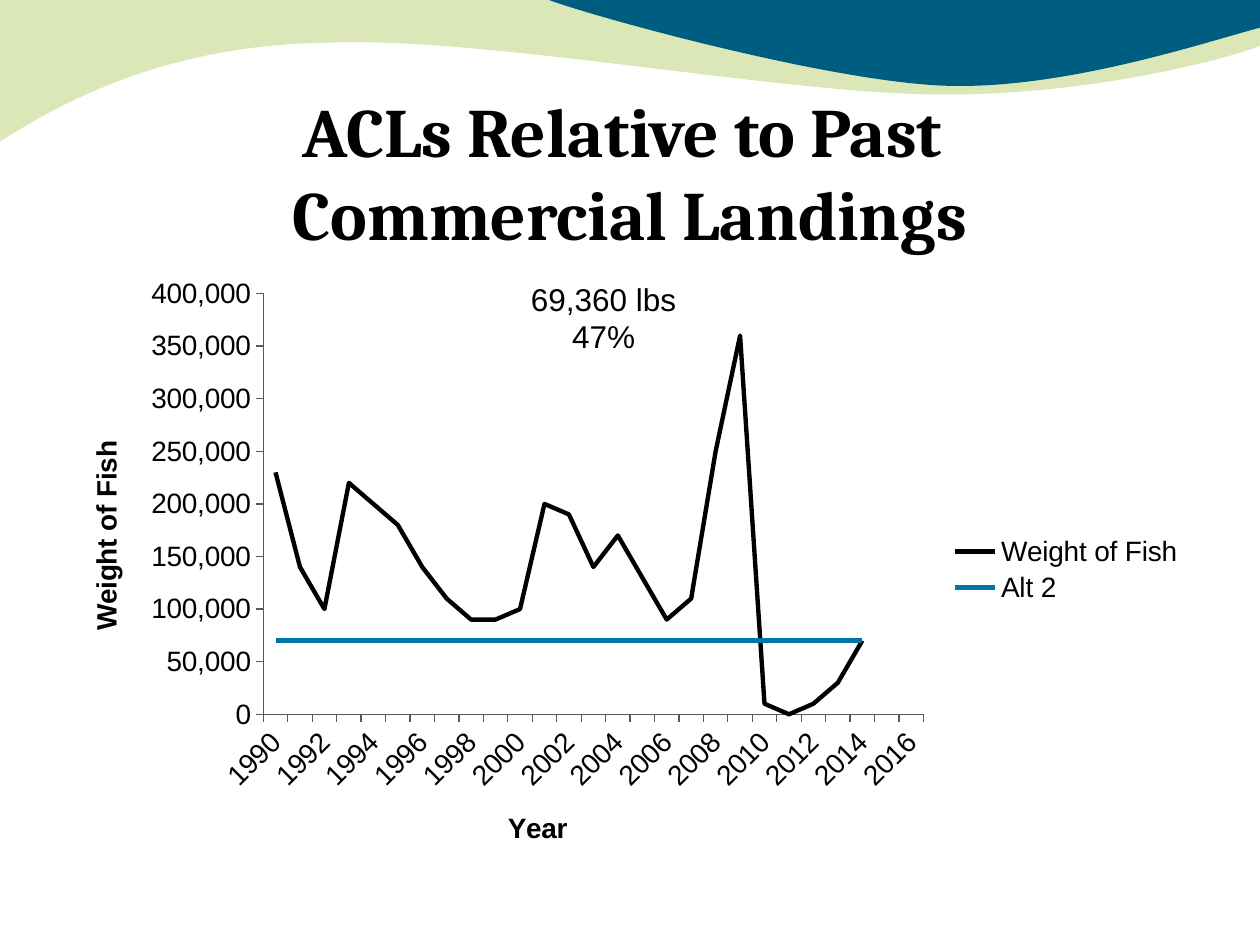
import pptx
import pptx.util
import pptx.chart.data
import pptx.dml.color
import pptx.enum.chart
import pptx.enum.text
import pptx.oxml
import pptx.oxml.ns
from dataclasses import dataclass

Inches = pptx.util.Inches
Pt = pptx.util.Pt
qn = pptx.oxml.ns.qn
XL = pptx.enum.chart


@dataclass(frozen=True)
class Theme:
    green: str = "DBE7B6"
    blue: str = "005D82"
    black: str = "000000"
    line: str = "0076A3"
    axis: str = "595959"
    head: str = "Cambria"
    body: str = "Arial"
    title: float = 39.6
    note: float = 18
    chart: float = 16


THEME = Theme()

# Wave outlines: start point, then line (2 numbers) or curve (6 numbers) steps
GREEN = [(0, 0), (4.4, -0.01), (4.76, 0.17, 6.64, 0.63, 7.58, 0.63),
         (8.53, 0.63, 9.58, 0.26, 10, 0.09), (10.01, 0.36),
         (9.83, 0.44, 8.7, 0.76, 7.46, 0.75),
         (6.22, 0.75, 3.82, 0.28, 2.57, 0.34),
         (1.29, 0.36, 0.46, 0.83, -0.01, 1.13)]
BLUE = [(4.33, -0.01), (4.66, 0.12, 6.54, 0.64, 7.48, 0.68),
        (8.43, 0.72, 9.58, 0.33, 10, 0.22), (10, 0)]

YEARS = range(1990, 2017)
FISH = [230, 140, 100, 220, 200, 180, 140, 110, 90, 90, 100, 200, 190,
        140, 170, 130, 90, 110, 250, 360, 10, 0, 10, 30, 70]
LIMIT = 70


def color(code):
    return pptx.dml.color.RGBColor.from_string(code)


def style(font, name, size, bold=False):
    form = {"name": name, "size": Pt(size), "bold": bold}
    for key, val in form.items():
        setattr(font, key, val)
    font.color.rgb = color(THEME.black)


def add_wave(slide, steps, fill):
    pts = [(Inches(x), Inches(y)) for step in steps
           for x, y in zip(step[::2], step[1::2])]
    pen = slide.shapes.build_freeform(*pts[0])
    pen.add_line_segments(pts[1:], close=True)
    wave = pen.convert_to_shape()

    # Join each three points of a curve step into one curve
    lines = iter(list(wave._element.iter(qn("a:lnTo"))))
    for step in steps[1:]:
        first = next(lines)
        if len(step) == 6:
            first.tag = qn("a:cubicBezTo")
            for line in (next(lines), next(lines)):
                first.append(line[0])
                line.getparent().remove(line)

    wave.shadow.inherit = False
    wave.fill.solid()
    wave.fill.fore_color.rgb = color(fill)
    wave.line.fill.background()


def add_text(slide, box, lines, name, size, bold=False, **frame):
    text = slide.shapes.add_textbox(*map(Inches, box)).text_frame
    text.word_wrap = True
    for key, val in frame.items():
        setattr(text, key, val)
    for i, line in enumerate(lines):
        para = text.add_paragraph() if i else text.paragraphs[0]
        para.text = line
        para.alignment = pptx.enum.text.PP_ALIGN.CENTER
        for run in para.runs:
            style(run.font, name, size, bold)


def set_place(node, index, box, place):
    """Fix a chart part at a place given in inches inside the chart box."""
    for old in node.findall(qn("c:layout")):
        node.remove(old)
    tags = {"xMode": "edge", "yMode": "edge"}
    if len(place) == 4:
        tags = {"layoutTarget": "inner", **tags}
    for key, part, full in zip("xywh", place, box[2:] * 2):
        tags[key] = part / full
    body = "".join(f'<c:{key} val="{val}"/>' for key, val in tags.items())
    node.insert(index, pptx.oxml.parse_xml(
        f'<c:layout {pptx.oxml.ns.nsdecls("c")}>'
        f"<c:manualLayout>{body}</c:manualLayout></c:layout>"))


def set_axis(axis, label, box, place):
    form = {"has_major_gridlines": False,
            "major_tick_mark": XL.XL_TICK_MARK.OUTSIDE,
            "minor_tick_mark": XL.XL_TICK_MARK.NONE}
    for key, val in form.items():
        setattr(axis, key, val)
    axis.format.line.color.rgb = color(THEME.axis)
    axis.format.line.width = Pt(0.75)
    style(axis.tick_labels.font, THEME.body, THEME.chart)
    title = axis.axis_title
    title.text_frame.text = label
    style(title.text_frame.paragraphs[0].runs[0].font,
          THEME.body, THEME.chart, True)
    set_place(title._element, 1, box, place)


def add_graph(slide, box):
    data = pptx.chart.data.CategoryChartData(number_format="#,##0")
    data.categories = YEARS
    data.categories.number_format = "General"
    data.add_series("Weight of Fish", [n * 1000 for n in FISH])
    data.add_series("Alt 2", [LIMIT * 1000] * len(FISH))
    chart = slide.shapes.add_chart(
        XL.XL_CHART_TYPE.LINE, *map(Inches, box), data).chart
    style(chart.font, THEME.body, THEME.chart)
    chart.has_title = False
    chart.has_legend = True
    chart.legend.position = XL.XL_LEGEND_POSITION.RIGHT
    chart.legend.include_in_layout = False
    style(chart.legend.font, THEME.body, THEME.chart)

    # Series lines
    chart.plots[0].vary_by_categories = False
    for line, code in zip(chart.plots[0].series, (THEME.black, THEME.line)):
        line.smooth = False
        line.marker.style = XL.XL_MARKER_STYLE.NONE
        line.format.line.color.rgb = color(code)
        line.format.line.width = Pt(2.5)

    # Axes
    cat, val = chart.category_axis, chart.value_axis
    set_axis(cat, "Year", box, (3.49, 4.27))
    set_axis(val, "Weight of Fish", box, (0.16, 1.34))
    val.minimum_scale, val.maximum_scale, val.major_unit = 0, 400000, 50000
    for axis, form in ((cat, "General"), (val, "#,##0")):
        axis.tick_labels.number_format = form
        axis.tick_labels.number_format_is_linked = False

    # Slanted label for every second year, tick for each year
    node = cat._element
    node.find(qn("c:txPr")).find(qn("a:bodyPr")).set("rot", "-2700000")
    last = node.find(qn("c:noMultiLvlLbl"))
    for tag, step in (("tickLblSkip", 2), ("tickMarkSkip", 1)):
        last.addprevious(pptx.oxml.parse_xml(
            f'<c:{tag} {pptx.oxml.ns.nsdecls("c")} val="{step}"/>'))
    plot = chart._chartSpace.find(qn("c:chart")).find(qn("c:plotArea"))
    set_place(plot, 0, box, (1.59, 0.21, 5.24, 3.34))


def main():
    deck = pptx.Presentation()
    deck.slide_width, deck.slide_height = Inches(10), Inches(7.5)
    slide = deck.slides.add_slide(deck.slide_layouts[6])

    # Top waves
    add_wave(slide, GREEN, THEME.green)
    add_wave(slide, BLUE, THEME.blue)

    # Title, chart and note
    add_text(slide, (0.5, 0.77, 9, 1.25),
             ["ACLs Relative to Past \vCommercial Landings"],
             THEME.head, THEME.title, True, margin_left=0, margin_right=0,
             margin_bottom=0, vertical_anchor=pptx.enum.text.MSO_ANCHOR.BOTTOM)
    add_graph(slide, (0.5, 2.12, 9, 4.8))
    add_text(slide, (4, 2.17, 1.58, 0.71), ["69,360 lbs", "47%"],
             THEME.body, THEME.note)
    deck.save("out.pptx")


if __name__ == "__main__":
    main()
